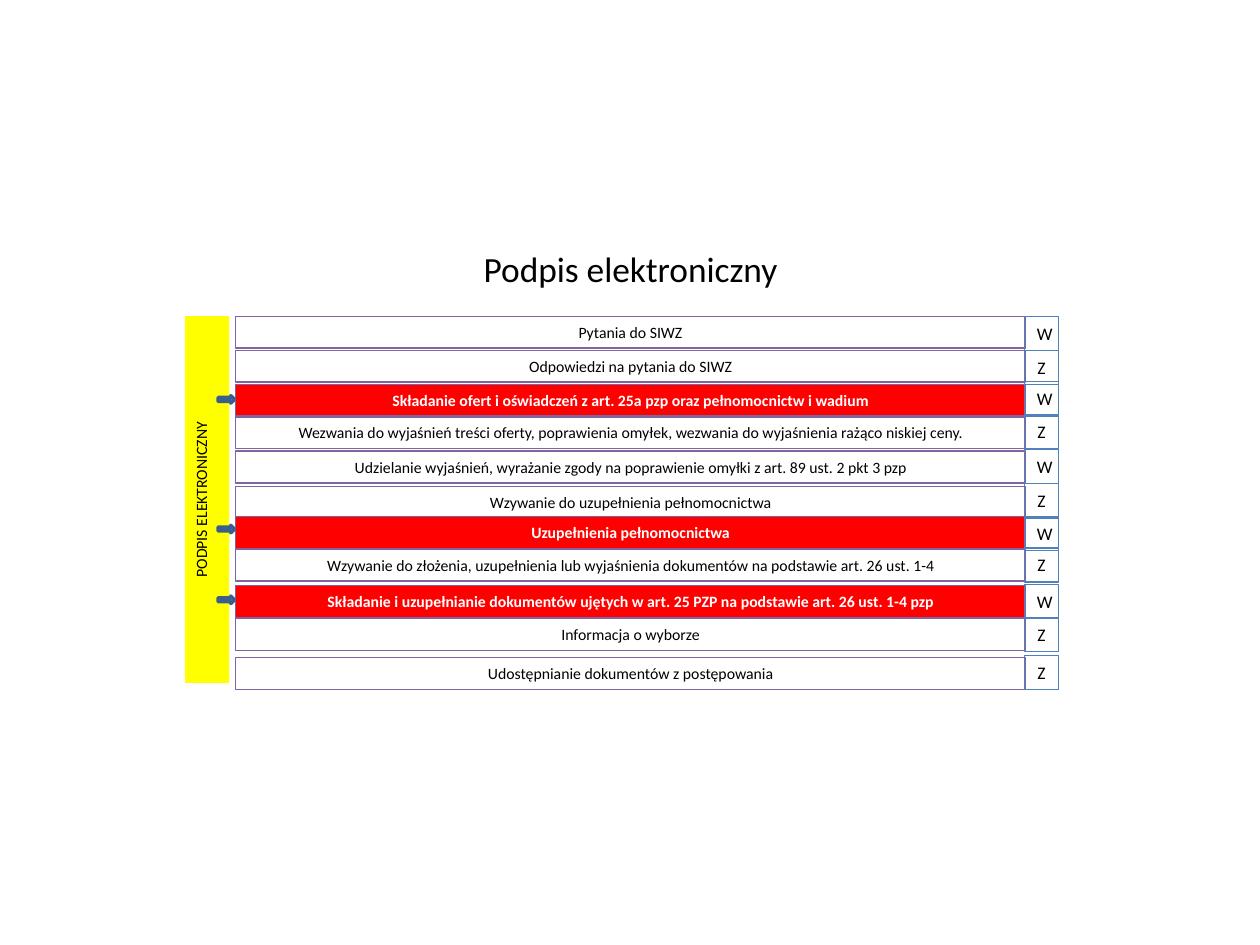
from lxml import etree
from pptx import Presentation
from pptx.dml.color import RGBColor
from pptx.enum.shapes import MSO_SHAPE
from pptx.enum.text import MSO_ANCHOR, MSO_AUTO_SIZE, PP_ALIGN
from pptx.util import Pt

RECT, ARROW = MSO_SHAPE.RECTANGLE, MSO_SHAPE.RIGHT_ARROW
TOP, MIDDLE = MSO_ANCHOR.TOP, MSO_ANCHOR.MIDDLE
CENTER = PP_ALIGN.CENTER
NO_FIT, GROW = MSO_AUTO_SIZE.NONE, MSO_AUTO_SIZE.SHAPE_TO_FIT_TEXT

COLORS = {
    "black": "000000", "white": "FFFFFF", "red": "FF0000", "yellow": "FFFF00",
    "purple": "8064A2", "blue": "4F81BD", "dark_blue": "3A5F8C",
}

# text, row top, letter, letter top, arrow top (highlighted rows only)
STEPS = [
    ("Pytania do SIWZ", 180.7, "W", 180.7, None),
    ("Odpowiedzi na pytania do SIWZ", 200.2, "Z", 200.2, None),
    ("Składanie ofert i oświadczeń z art. 25a pzp oraz pełnomocnictw i wadium",
     219.6, "W", 218.2, 226.1),
    ("Wezwania do wyjaśnień treści oferty, poprawienia omyłek, "
     "wezwania do wyjaśnienia rażąco niskiej ceny.", 238.3, "Z", 236.9, None),
    ("Udzielanie wyjaśnień, wyrażanie zgody na poprawienie omyłki "
     "z art. 89 ust. 2 pkt 3 pzp", 257.8, "W", 257, None),
    ("Wzywanie do uzupełnienia pełnomocnictwa", 277.9, "Z", 276.5, None),
    ("Uzupełnienia pełnomocnictwa", 295.2, "W", 295.2, 300.2),
    ("Wzywanie do złożenia, uzupełnienia lub wyjaśnienia dokumentów "
     "na podstawie art. 26 ust. 1-4", 313.9, "Z", 313.2, None),
    ("Składanie i uzupełnianie dokumentów ujętych w art. 25 PZP "
     "na podstawie art. 26 ust. 1-4 pzp", 334.8, "W", 334.1, 340.6),
    ("Informacja o wyborze", 353.5, "Z", 352.8, None),
    ("Udostępnianie dokumentów z postępowania", 375.8, "Z", 374.4, None),
]


def write(tf, text, size, color="black", bold=False):
    p = tf.paragraphs[0]
    p.alignment = CENTER
    r = p.add_run()
    r.text = text
    r.font.name = "Calibri"
    r.font.size = Pt(size)
    r.font.bold = bold
    r.font.color.rgb = RGBColor.from_string(COLORS[color])


def add_shape(kind, x, y, w, h, fill=None, line=None, line_width=0.75):
    sp = slide.shapes.add_shape(kind, Pt(x), Pt(y), Pt(w), Pt(h))
    sp.shadow.inherit = False
    if fill:
        sp.fill.solid()
        sp.fill.fore_color.rgb = RGBColor.from_string(COLORS[fill])
    else:
        sp.fill.background()
    if line:
        sp.line.color.rgb = RGBColor.from_string(COLORS[line])
        sp.line.width = Pt(line_width)
    else:
        sp.line.fill.background()
    tf = sp.text_frame
    tf.word_wrap = True
    tf.vertical_anchor = TOP
    return sp


prs = Presentation()
prs.slide_width, prs.slide_height = Pt(720), Pt(540)
slide = prs.slides.add_slide(prs.slide_layouts[5])

title = slide.shapes.title
title.left, title.top, title.width, title.height = Pt(127.4), Pt(134.6), Pt(465.8), Pt(37.4)
title.text_frame.auto_size = NO_FIT
title.text_frame.vertical_anchor = MIDDLE
write(title.text_frame, "Podpis elektroniczny", 20.2)

side_bar = add_shape(RECT, 105.8, 180.7, 25.2, 209.5, "yellow")
side_bar.text_frame._txBody.bodyPr.set("vert", "vert270")
write(side_bar.text_frame, "PODPIS ELEKTRONICZNY", 9)

for text, row_top, letter, letter_top, arrow_top in STEPS:
    highlighted = arrow_top is not None
    row = add_shape(RECT, 134.6, row_top, 451.4, 18.2,
                    "red" if highlighted else "white", "purple")
    row.text_frame.auto_size = GROW
    write(row.text_frame, text, 9, "white" if highlighted else "black", highlighted)

    box = add_shape(RECT, 585.4, letter_top, 19.4, 19.5, None, "blue")
    box.text_frame.auto_size = GROW
    write(box.text_frame, letter, 10.1)

    if highlighted:
        add_shape(ARROW, 124.6, arrow_top, 9.4, 4.3, "blue", "dark_blue", 2)

prs.save("out.pptx")
